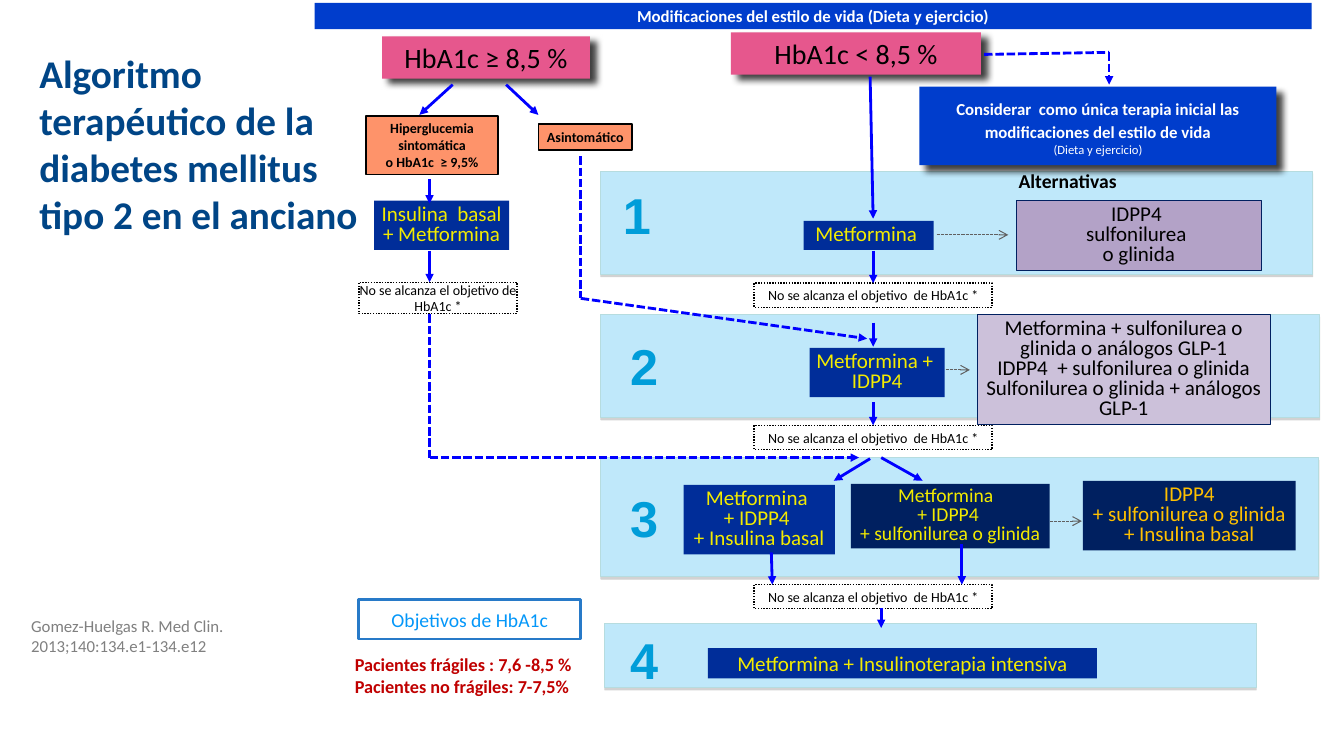
"""Build a one-slide treatment algorithm for type 2 diabetes in older people."""
import dataclasses
import itertools

import lxml.etree
import pptx
import pptx.dml.color
import pptx.enum.dml
import pptx.enum.shapes
import pptx.enum.text
import pptx.oxml.ns
import pptx.util

Inches = pptx.util.Inches
Pt = pptx.util.Pt
RGB = pptx.dml.color.RGBColor.from_string
qn = pptx.oxml.ns.qn
Align = pptx.enum.text.PP_ALIGN
Anchor = pptx.enum.text.MSO_ANCHOR
Dash = pptx.enum.dml.MSO_LINE
RECTANGLE = pptx.enum.shapes.MSO_SHAPE.RECTANGLE
STRAIGHT = pptx.enum.shapes.MSO_CONNECTOR.STRAIGHT


@dataclasses.dataclass(frozen=True)
class Style:
    """Look of one kind of box."""
    fill: str = None
    line: str = None
    width: float = 1
    dash: object = None
    ink: str = "000000"
    size: float = 15
    bold: bool = False
    spacing: float = None
    insets: tuple = (0.04, 0.04)
    shadow: tuple = None


@dataclasses.dataclass(frozen=True)
class Theme:
    """Colours, type sizes and box styles of the slide."""
    font: str = "Calibri"
    digit_font: str = "Arial"
    title: str = "004586"
    title_size: float = 28
    digit: str = "009DD9"
    digit_size: float = 36
    black: str = "000000"
    heading_size: float = 14
    goals: str = "C00000"
    goals_size: float = 13
    citation: str = "808080"
    citation_size: float = 12
    small_size: float = 9
    flow: str = "0000FF"
    option: str = "606060"
    band = Style("BFE8FA", "B6DCDF", 0.75, shadow=("808080", 35, 0, 1.8, 90))
    level = Style("E6578D", size=20, shadow=("000000", 75, 5, 6, 40))
    symptom = Style("FE936A", "000000", size=10, bold=True)
    drug = Style("002D99", ink="F3EB00", spacing=0.8, insets=(0, 0.04))
    dark_drug = Style("002060", ink="F3EB00", size=14, spacing=0.8, insets=(0, 0.04))
    dark_option = Style("002060", ink="FFC000", spacing=0.8, insets=(0, 0.04))
    lilac = Style("B3A2C7", "002060", 0.75, spacing=0.8, insets=(0, 0.04))
    pale_lilac = Style("CCC1DA", "002060", 0.75, spacing=0.8, insets=(0, 0.04))
    note = Style(line="000000", dash=Dash.ROUND_DOT, size=10, insets=(0, 0))
    goal = Style("FFFFFF", "287AC8", 2, ink="0497F9", size=14, insets=(0.04, 0))
    banner = Style("003DCC", ink="FFFFFF", size=12, bold=True, insets=(0.04, 0))
    advice = dataclasses.replace(banner, spacing=1.15, shadow=("000000", 75, 5, 6, 45))


theme = Theme()


def write(box, text, size, ink, bold=False, font=theme.font, align=Align.LEFT, spacing=None):
    """Put formatted text in a box."""
    box.text_frame.text = text
    for para in box.text_frame.paragraphs:
        para.alignment = align
        if spacing:
            para.line_spacing = spacing
        for span in para.runs:
            span.font.name = font
            span.font.size = Pt(size)
            span.font.bold = bold
            span.font.color.rgb = RGB(ink)


def draw_line(start, end, ink, width, dash=None, head=None):
    """Draw a straight line, with an arrowhead at its end if one is named."""
    points = [Inches(value) for value in (*start, *end)]
    line = page.shapes.add_connector(STRAIGHT, *points)
    line.line.color.rgb = RGB(ink)
    line.line.width = Pt(width)
    if dash:
        line.line.dash_style = dash
    outline = line.element.spPr
    if head:
        lxml.etree.SubElement(outline.find(qn("a:ln")), qn("a:tailEnd"), type=head)
    lxml.etree.SubElement(outline, qn("a:effectLst"))
    return line


deck = pptx.Presentation()
deck.slide_width = Inches(13.33)
deck.slide_height = Inches(7.5)
page = deck.slides.add_slide(deck.slide_layouts[5])

title = page.shapes.title
title.left, title.top, title.width, title.height = map(Inches, (0.29, 0.44, 3.36, 2.46))
title.text_frame.word_wrap = True
title.text_frame.auto_size = pptx.enum.text.MSO_AUTO_SIZE.NONE
title.text_frame.vertical_anchor = Anchor.TOP
write(title, "Algoritmo terapéutico de la diabetes mellitus tipo 2 en el anciano",
      theme.title_size, theme.title, True)

missed = "No se alcanza el objetivo  de HbA1c *"
boxes = [
    ("band 4", "", (6, 6.19, 6.46, 0.63), theme.band),
    ("band 3", "", (5.96, 4.54, 7.12, 1.18), theme.band),
    ("band 2", "", (5.96, 3.12, 7.13, 1.02), theme.band),
    ("band 1", "", (5.96, 1.7, 7.06, 1.02), theme.band),
    ("low", "HbA1c < 8,5 %", (7.25, 0.32, 2.48, 0.42), theme.level),
    ("high", "HbA1c ≥ 8,5 %", (3.79, 0.36, 2.06, 0.42), theme.level),
    ("step 1", "Metformina ", (7.97, 2.19, 1.29, 0.29), theme.drug),
    ("missed 1", missed, (7.48, 2.81, 2.36, 0.24), theme.note),
    ("step 3", "Metformina \n+ IDPP4 \n+ Insulina basal", (6.78, 4.81, 1.5, 0.69), theme.drug),
    ("step 3 oral", "Metformina  \n+ IDPP4 \n+ sulfonilurea o glinida",
     (8.44, 4.8, 1.97, 0.64), theme.dark_drug),
    ("step 4", "Metformina + Insulinoterapia intensiva", (7.02, 6.43, 3.86, 0.3),
     dataclasses.replace(theme.drug, spacing=None, insets=(0, 0))),
    ("no symptoms", "Asintomático", (5.34, 1.23, 0.93, 0.26), theme.symptom),
    ("symptoms", "Hiperglucemia sintomática\no HbA1c  ≥ 9,5%", (3.63, 1.15, 1.31, 0.58),
     theme.symptom),
    ("insulin", "Insulina  basal\n+ Metformina", (3.71, 1.99, 1.34, 0.49), theme.drug),
    ("missed insulin", "No se alcanza el objetivo de HbA1c *", (3.56, 2.8, 1.57, 0.31),
     theme.note),
    ("step 2", "Metformina + \nIDPP4", (8.03, 3.45, 1.34, 0.49), theme.drug),
    ("goals", "Objetivos de HbA1c", (3.56, 5.95, 2.2, 0.39), theme.goal),
    ("option 1", "IDPP4 \nsulfonilurea \no glinida", (10.08, 1.99, 2.43, 0.69), theme.lilac),
    ("option 2", "Metformina + sulfonilurea o glinida o análogos GLP-1\n"
     "IDPP4  + sulfonilurea o glinida\nSulfonilurea o glinida + análogos GLP-1",
     (9.69, 3.12, 2.91, 1.09), theme.pale_lilac),
    ("option 3", "IDPP4\n+ sulfonilurea o glinida\n+ Insulina basal",
     (10.74, 4.77, 2.11, 0.69), theme.dark_option),
    ("missed 2", missed, (7.48, 4.22, 2.36, 0.24), theme.note),
    ("missed 3", missed, (7.48, 5.8, 2.36, 0.24), theme.note),
    ("banner", "Modificaciones del estilo de vida (Dieta y ejercicio)",
     (3.12, 0.03, 9.89, 0.26), theme.banner),
    ("advice", "Considerar  como única terapia inicial las modificaciones del estilo de vida\n"
     "(Dieta y ejercicio)", (9.12, 0.86, 3.54, 0.78), theme.advice),
]
placed = {}
for name, text, place, style in boxes:
    box = placed[name] = page.shapes.add_shape(RECTANGLE, *map(Inches, place))
    box.shadow.inherit = False
    if style.fill:
        box.fill.solid()
        box.fill.fore_color.rgb = RGB(style.fill)
    else:
        box.fill.background()
    if style.line:
        box.line.color.rgb = RGB(style.line)
        box.line.width = Pt(style.width)
        if style.dash:
            box.line.dash_style = style.dash
    else:
        box.line.fill.background()
    if style.shadow:
        ink, alpha, blur, distance, angle = style.shadow
        shade = lxml.etree.SubElement(
            box.element.spPr.find(qn("a:effectLst")), qn("a:outerShdw"), blurRad=str(Pt(blur)),
            dist=str(Pt(distance)), dir=str(angle * 60000), algn="tl", rotWithShape="0")
        tint = lxml.etree.SubElement(shade, qn("a:srgbClr"), val=ink)
        lxml.etree.SubElement(tint, qn("a:alpha"), val=str(alpha * 1000))
    if text:
        frame = box.text_frame
        frame.word_wrap = True
        frame.vertical_anchor = Anchor.MIDDLE
        frame.margin_left = frame.margin_right = Inches(style.insets[0])
        frame.margin_top = frame.margin_bottom = Inches(style.insets[1])
        write(box, text, style.size, style.ink, style.bold, align=Align.CENTER,
              spacing=style.spacing)
remark = placed["advice"].text_frame.paragraphs[1]
remark.line_spacing = 1.0
for span in remark.runs:
    span.font.size = Pt(theme.small_size)
    span.font.bold = False

labels = [
    ("Alternativas", (9.92, 1.63, 1.34, 0.33), True,
     (theme.heading_size, theme.black, True, theme.font, Align.CENTER)),
    ("Pacientes frágiles : 7,6 -8,5 %\nPacientes no frágiles: 7-7,5%",
     (3.42, 6.43, 2.38, 0.54), False, (theme.goals_size, theme.goals, True)),
    ("Gomez-Huelgas R. Med Clin. 2013;140:134.e1-134.e12",
     (0.21, 6.06, 2.55, 0.5), True, (theme.citation_size, theme.citation)),
]
for number, (left, top) in enumerate([(6.08, 1.78), (6.15, 3.28), (6.15, 4.78), (6.15, 6.19)], 1):
    labels.append((str(number), (left, top, 0.48, 0.71), False,
                   (theme.digit_size, theme.digit, True, theme.digit_font)))
for text, place, wrap, look in labels:
    box = page.shapes.add_textbox(*map(Inches, place))
    box.text_frame.word_wrap = wrap
    write(box, text, *look)

for start, end in [
    ((8.63, 0.76), (8.66, 2.17)), ((8.63, 4.55), (8.27, 4.77)), ((8.74, 4.54), (9.15, 4.77)),
    ((8.74, 6.03), (8.74, 6.23)), ((4.49, 0.84), (4.16, 1.14)), ((5.02, 0.84), (5.34, 1.14)),
    ((8.66, 3.2), (8.66, 3.44)), ((9.54, 5.4), (9.54, 5.8)), ((7.65, 5.48), (7.66, 5.8)),
    ((4.26, 1.78), (4.26, 2.02)), ((4.26, 2.49), (4.26, 2.8)),
]:
    draw_line(start, end, theme.flow, 2, head="triangle")
for name, start, end in [("missed 1", (8.66, 2.49), (8.66, 2.81)),
                         ("missed 2", (8.66, 3.99), (8.66, 4.22))]:
    draw_line(start, end, theme.flow, 2, head="triangle").end_connect(placed[name], 0)

for start, end in [((9.29, 2.33), (10, 2.33)), ((9.38, 3.67), (9.62, 3.67)),
                   ((10.41, 5.17), (10.73, 5.17))]:
    draw_line(start, end, theme.option, 0.75, Dash.SQUARE_DOT, "arrow")

for route in [
    [(5.76, 1.55), (5.76, 2.96), (8.6, 3.36)],
    [(4.26, 3.12), (4.26, 4.54), (8.52, 4.54)],
    [(9.76, 0.54), (11, 0.52), (11, 0.84)],
]:
    for start, end in itertools.pairwise(route):
        draw_line(start, end, theme.flow, 2, Dash.SQUARE_DOT,
                  "triangle" if end == route[-1] else None)

deck.save("out.pptx")
